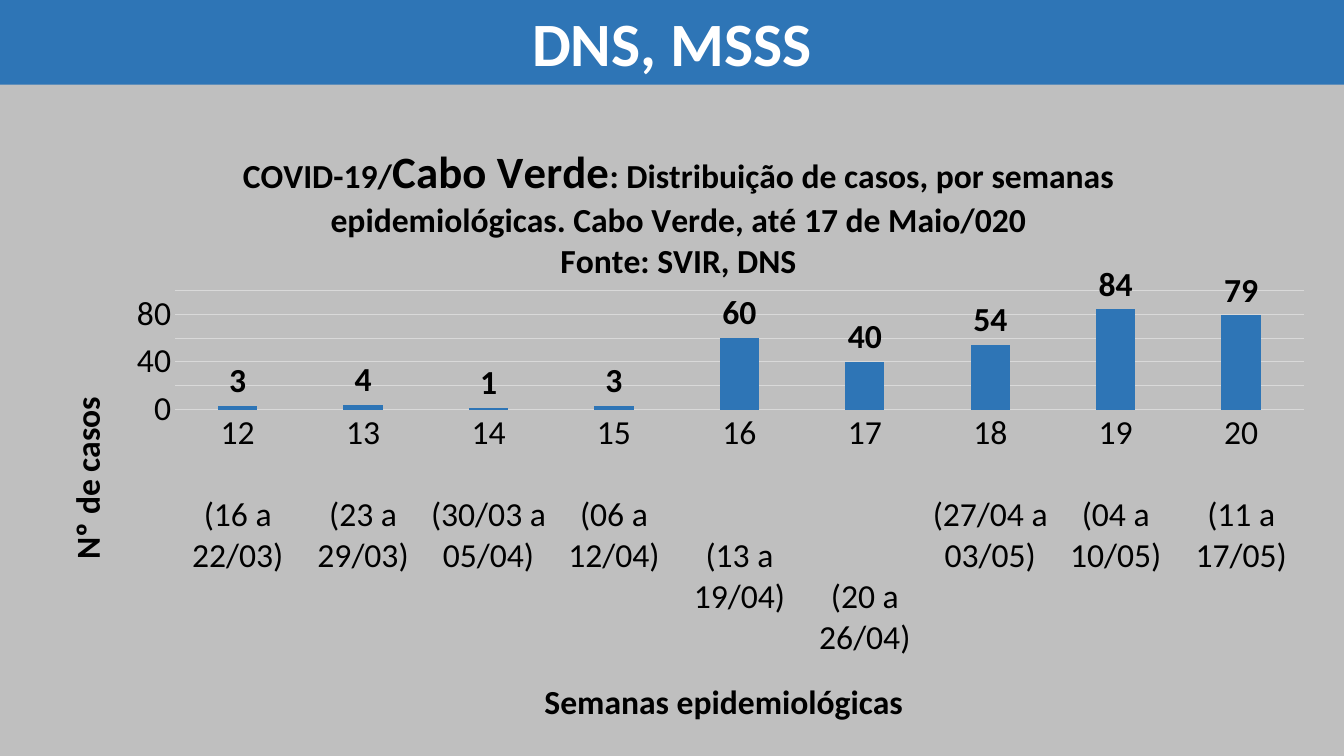
"""Build the slide with weekly COVID-19 cases in Cabo Verde."""
from typing import NamedTuple

from lxml.etree import SubElement
from pptx import Presentation
from pptx.chart.data import CategoryChartData
from pptx.dml.color import RGBColor
from pptx.enum.chart import XL_CHART_TYPE as ChartType
from pptx.enum.chart import XL_LABEL_POSITION as LabelPos
from pptx.enum.chart import XL_TICK_MARK as TickMark
from pptx.enum.shapes import MSO_SHAPE as Shape
from pptx.enum.text import MSO_ANCHOR as Anchor
from pptx.enum.text import PP_ALIGN as Align
from pptx.oxml.ns import qn
from pptx.util import Inches, Pt

BLUE = RGBColor(0x2E, 0x75, 0xB6)
GRAY = RGBColor(0xBF, 0xBF, 0xBF)
GRID = RGBColor(0xD9, 0xD9, 0xD9)
BLACK = RGBColor(0, 0, 0)
WHITE = RGBColor(0xFF, 0xFF, 0xFF)
FONT = "Calibri"


class Week(NamedTuple):
    number: int
    dates: str
    cases: int
    drop: int = 2


class Run(NamedTuple):
    text: str
    size: int = 24


WEEKS = [
    Week(12, "(16 a 22/03)", 3),
    Week(13, "(23 a 29/03)", 4),
    Week(14, "(30/03 a 05/04)", 1),
    Week(15, "(06 a 12/04)", 3),
    Week(16, "(13 a 19/04)", 60, 3),
    Week(17, "(20 a 26/04)", 40, 4),
    Week(18, "(27/04 a 03/05)", 54),
    Week(19, "(04 a 10/05)", 84),
    Week(20, "(11 a 17/05)", 79),
]
TITLE = [
    [
        Run("COVID-19/"),
        Run("Cabo Verde", 32),
        Run(": Distribuição de casos, por semanas epidemiológicas. "
            "Cabo Verde, até 17 de Maio/020"),
    ],
    [Run("Fonte: SVIR, DNS")],
]


def style(font, size: int, color: RGBColor = BLACK, bold: bool = False) -> None:
    """Set face, size, colour and weight of a font."""
    font.name, font.size, font.bold = FONT, Pt(size), bold
    font.color.rgb = color


def write(tf, lines: list[list[Run]], color: RGBColor = BLACK) -> None:
    """Write centred bold paragraphs run by run."""
    for i, line in enumerate(lines):
        p = tf.add_paragraph() if i else tf.paragraphs[0]
        p.alignment = Align.CENTER
        for run in line:
            r = p.add_run()
            r.text = run.text
            style(r.font, run.size, color, True)


def place(element, index: int, **fractions: float) -> None:
    """Give a chart part a manual layout in fractions of the chart."""
    for old in element.findall(qn("c:layout")):
        element.remove(old)
    layout = element.makeelement(qn("c:layout"))
    element.insert(index, layout)
    manual = SubElement(layout, qn("c:manualLayout"))
    if "w" in fractions:
        SubElement(manual, qn("c:layoutTarget")).set("val", "inner")
    for name in ("x", "y"):
        SubElement(manual, qn(f"c:{name}Mode")).set("val", "edge")
    for name, value in fractions.items():
        SubElement(manual, qn(f"c:{name}")).set("val", str(value))


def add_title(owner, lines: list[list[Run]], x: float, y: float) -> None:
    """Write and place the title of a chart or an axis."""
    write(owner.text_frame, lines)
    place(owner._element, 1, x=x, y=y)


def add_header(s) -> None:
    """Draw the blue band with the name of the institution."""
    sp = s.shapes.add_shape(Shape.RECTANGLE, 0, 0, Inches(13.33), Inches(0.84))
    sp.shadow.inherit = False
    sp.fill.solid()
    sp.fill.fore_color.rgb = BLUE
    sp.line.fill.background()
    tf = sp.text_frame
    tf.word_wrap = True
    tf.vertical_anchor = Anchor.MIDDLE
    write(tf, [[Run("DNS, MSSS", 44)]], WHITE)


def add_cases_chart(s) -> None:
    """Draw the column chart of cases by epidemiological week."""
    data = CategoryChartData()
    data.categories = [f"{w.number}" + "\n" * w.drop + w.dates for w in WEEKS]
    data.add_series("Series 1", [w.cases for w in WEEKS])
    chart = s.shapes.add_chart(
        ChartType.COLUMN_CLUSTERED, Inches(0.32), Inches(1.14),
        Inches(12.87), Inches(6.22), data).chart
    style(chart.font, 24)
    chart.has_legend = False
    chart.has_title = True
    add_title(chart.chart_title, TITLE, 0.16, 0.04)
    place(chart._chartSpace.chart.plotArea, 0, x=0.11, y=0.28, w=0.87, h=0.19)

    plot = chart.plots[0]
    plot.gap_width, plot.overlap = 219, -27
    plot.vary_by_categories = False
    fill = plot.series[0].format.fill
    fill.solid()
    fill.fore_color.rgb = BLUE
    plot.has_data_labels = True
    labels = plot.data_labels
    labels.show_value = True
    labels.position = LabelPos.OUTSIDE_END
    style(labels.font, 24, bold=True)

    cat, val = chart.category_axis, chart.value_axis
    for axis in (cat, val):
        axis.major_tick_mark = axis.minor_tick_mark = TickMark.NONE
        style(axis.tick_labels.font, 24)
    val.minimum_scale, val.maximum_scale, val.major_unit = 0, 100, 20
    val.format.line.fill.background()
    for line in (cat.format.line, val.major_gridlines.format.line):
        line.color.rgb = GRID
        line.width = Pt(0.75)
    add_title(cat.axis_title, [[Run("Semanas epidemiológicas")]], 0.39, 0.89)
    add_title(val.axis_title, [[Run("Nº de casos")]], 0.02, 0.44)
    body = val.axis_title._element.find(".//" + qn("a:bodyPr"))
    body.set("rot", "-5400000")
    body.set("vert", "horz")


def main() -> None:
    """Create and save the presentation."""
    prs = Presentation()
    prs.slide_width, prs.slide_height = Inches(13.33), Inches(7.5)
    s = prs.slides.add_slide(prs.slide_layouts[6])
    s.background.fill.solid()
    s.background.fill.fore_color.rgb = GRAY
    add_header(s)
    add_cases_chart(s)
    prs.save("out.pptx")


if __name__ == "__main__":
    main()
